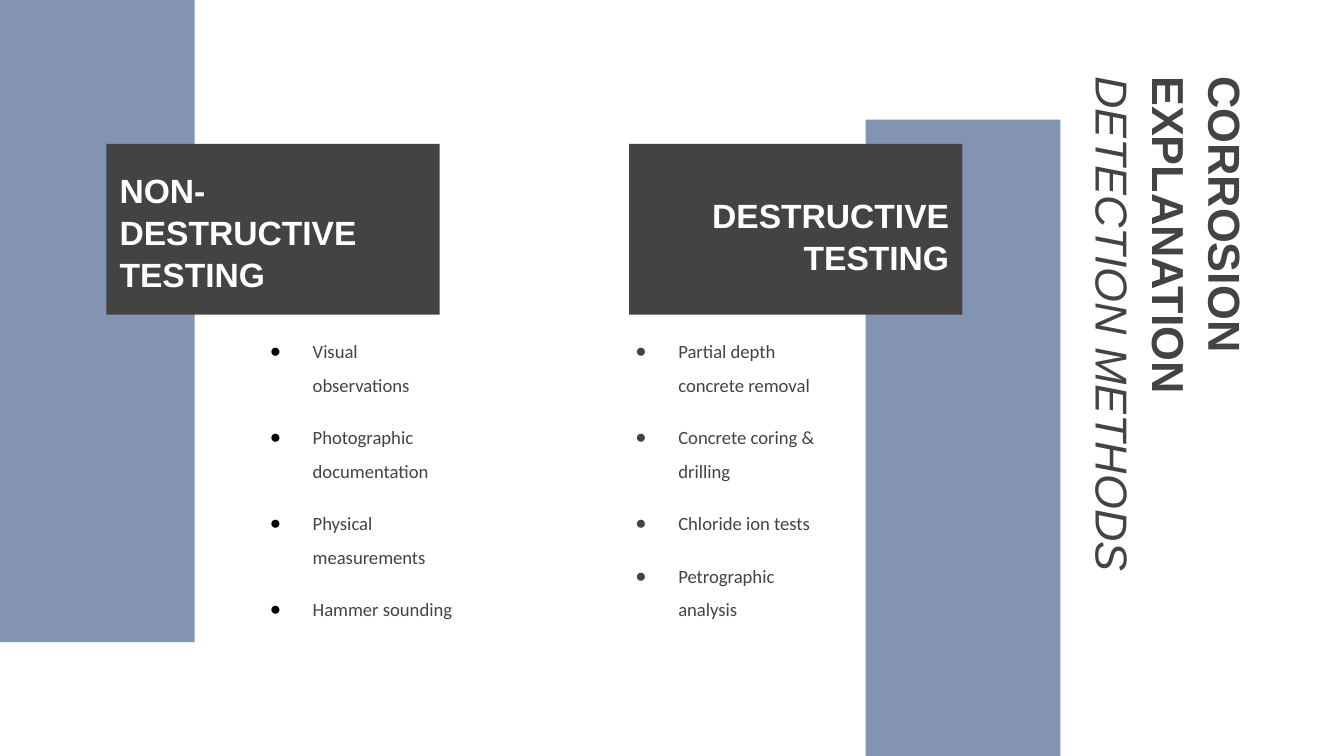
from lxml.etree import SubElement
from pptx import Presentation
from pptx.dml.color import RGBColor
from pptx.enum.shapes import MSO_SHAPE
from pptx.enum.text import MSO_ANCHOR, MSO_AUTO_SIZE, PP_ALIGN
from pptx.oxml.ns import qn
from pptx.util import Cm, Pt

DARK = "434343"
BLUE = "556D96"


def color(value):
    return RGBColor.from_string(value)


def fill_text(holder, place, lines, font, size, ink, anchor, align, spacing):
    """Move a placeholder to the front, set its text and format every run."""
    slide.shapes.element.append(holder.element)
    holder.left, holder.top, holder.width, holder.height = map(Cm, place)
    frame = holder.text_frame
    frame.text = "\n".join(lines)
    frame.word_wrap = True
    frame.auto_size = MSO_AUTO_SIZE.NONE
    frame.vertical_anchor = anchor
    frame.margin_left = frame.margin_right = Cm(0.25)
    frame.margin_top = frame.margin_bottom = Cm(0.25)
    for para in frame.paragraphs:
        para.alignment = align
        para.line_spacing = spacing
        para.space_before = Pt(0)
        for span in para.runs:
            span.font.name = font
            span.font.size = Pt(size)
            span.font.color.rgb = color(ink)


deck = Presentation()
deck.slide_width, deck.slide_height = Cm(25.4), Cm(14.29)
slide = deck.slides.add_slide(deck.slide_layouts.get_by_name("Comparison"))
holders = {item.placeholder_format.idx: item for item in slide.placeholders}

# Translucent bands, each with a dark heading box on top
for band_left, band_top, box_left in [(16.36, 2.26, 11.89), (0, 0, 2.01)]:
    for place, paint in [
        ((band_left, band_top, 3.68, 12.14), BLUE),
        ((box_left, 2.72, 6.3, 3.23), DARK),
    ]:
        box = slide.shapes.add_shape(MSO_SHAPE.RECTANGLE, *map(Cm, place))
        box.shadow.inherit = False
        box.line.fill.background()
        box.fill.solid()
        box.fill.fore_color.rgb = color(paint)
        if paint == BLUE:
            srgb = box.element.spPr.find(".//" + qn("a:srgbClr"))
            SubElement(srgb, qn("a:alpha"), val="73000")

# Bulleted lists
lists = [
    (2, 4.39, 6.17, "000000", ["Visual observations", "Photographic documentation",
                               "Physical measurements", "Hammer sounding"]),
    (4, 11.3, 6.02, DARK, ["Partial depth concrete removal", "Concrete coring & drilling",
                           "Chloride ion tests", "Petrographic analysis"]),
]
for index, left, height, bullet_color, items in lists:
    holder = holders[index]
    fill_text(holder, (left, 5.97, 4.52, height), items, "Calibri", 10, DARK,
              MSO_ANCHOR.TOP, PP_ALIGN.LEFT, 1.5)
    for para in holder.text_frame.paragraphs:
        para.space_before = Pt(10)
        properties = para._p.get_or_add_pPr()
        properties.set("marL", str(Cm(1.27)))
        properties.set("indent", str(Cm(-0.81)))
        bullet = SubElement(properties, qn("a:buClr"))
        SubElement(bullet, qn("a:srgbClr"), val=bullet_color)
        SubElement(properties, qn("a:buChar"), char="●")

# Column headings
headings = [
    (3, 11.89, 2.77, PP_ALIGN.RIGHT, ["DESTRUCTIVE TESTING"]),
    (1, 2.01, 3.1, PP_ALIGN.LEFT, ["NON-", "DESTRUCTIVE TESTING"]),
]
for index, left, height, align, lines in headings:
    fill_text(holders[index], (left, 2.72, 6.3, height), lines, "Arial", 18, "FFFFFF",
              MSO_ANCHOR.BOTTOM, align, 1.05)
    for para in holders[index].text_frame.paragraphs:
        para.runs[0].font.bold = True

# Vertical slide title
title = slide.shapes.title
fill_text(title, (16.28, 5.89, 11.71, 2.31),
          ["CORROSION EXPLANATION", "DETECTION METHODS"], "Arial", 24, DARK,
          MSO_ANCHOR.MIDDLE, PP_ALIGN.LEFT, 1.05)
title.rotation = 90
topic, subject = title.text_frame.paragraphs
topic.runs[0].font.bold = True
subject.runs[0].font.bold = False
subject.runs[0].font.italic = True

deck.save("out.pptx")
